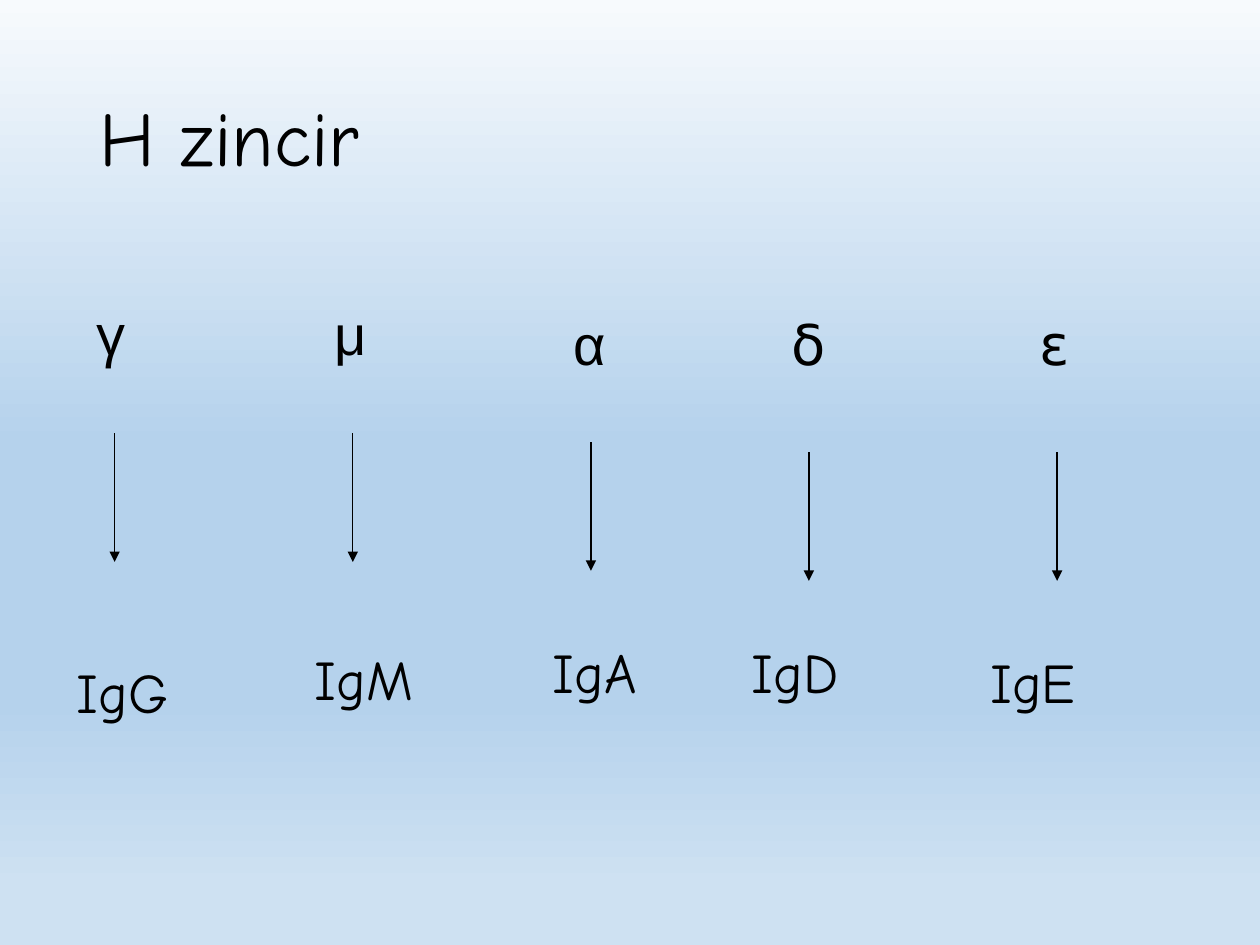
import pptx
import pptx.dml.color
import pptx.enum.shapes
import pptx.enum.text
import pptx.oxml
import pptx.oxml.ns
import pptx.util
from pptx.util import Inches

TITLE = "H zincir"
BACKDROP = [(0, "F7FAFD"), (47, "B5D2EC"), (74, "B5D2EC"), (94, "CEE1F2")]
INK = "000000"
HAND = "Comic Neue"

# chain: letter, font, left, top; arrow top; class: name, left, top, width
CHAINS = [
    ("γ", HAND, 0.67, 2.33, 3.44, "IgG", 0.51, 5.17, 1.18),
    ("μ", "Arial", 2.56, 2.33, 3.44, "IgM", 2.4, 5.07, 1.07),
    ("α", "Arial", 4.45, 2.41, 3.51, "IgA", 4.29, 5.01, 1.01),
    ("δ", "DejaVu Sans", 6.18, 2.41, 3.59, "IgD", 5.87, 5.01, 1),
    ("ε", "DejaVu Sans", 8.15, 2.41, 3.59, "IgE", 7.76, 5.09, 0.96),
]
LABEL_SIZE = 0.63
ARROW_INSET = 0.24
ARROW_LENGTH = 1.02


def color(value):
    return pptx.dml.color.RGBColor.from_string(value)


def add_xml(parent, tag, **attributes):
    child = pptx.oxml.parse_xml(f"<a:{tag} {pptx.oxml.ns.nsdecls('a')}/>")
    for key, value in attributes.items():
        child.set(key, str(value))
    parent.append(child)
    return child


def paint_backdrop(slide):
    fill = slide.background.fill
    fill.gradient()
    fill.gradient_angle = 270
    stops = slide.element.find(".//" + pptx.oxml.ns.qn("a:gsLst"))
    for stop in list(stops):
        stops.remove(stop)
    for percent, value in BACKDROP:
        add_xml(add_xml(stops, "gs", pos=percent * 1000), "srgbClr", val=value)


def add_label(slide, words, left, top, width, height=LABEL_SIZE, size=32, font=HAND, wrap=True):
    label = slide.shapes.add_textbox(Inches(left), Inches(top), Inches(width), Inches(height))
    frame = label.text_frame
    frame.text = words
    frame.word_wrap = wrap
    style = frame.paragraphs[0].runs[0].font
    style.name = font
    style.size = pptx.util.Pt(size)
    style.color.rgb = color(INK)
    return frame


def add_arrow(slide, x, top):
    arrow = slide.shapes.add_connector(
        pptx.enum.shapes.MSO_CONNECTOR.STRAIGHT,
        Inches(x), Inches(top), Inches(x), Inches(top + ARROW_LENGTH))
    arrow.line.color.rgb = color(INK)
    arrow.line.width = pptx.util.Pt(0.75)
    add_xml(arrow.line._get_or_add_ln(), "tailEnd", type="triangle")
    add_xml(arrow._element.spPr, "effectLst")


def main():
    deck = pptx.Presentation()
    deck.slide_width, deck.slide_height = Inches(10), Inches(7.5)
    slide = deck.slides.add_slide(deck.slide_layouts[6])
    paint_backdrop(slide)

    heading = add_label(slide, TITLE, 0.69, 0.4, 8.62, 1.45, size=44)
    heading.vertical_anchor = pptx.enum.text.MSO_ANCHOR.MIDDLE
    heading.paragraphs[0].line_spacing = 0.9

    for letter, font, left, top, arrow_top, name, name_left, name_top, name_width in CHAINS:
        add_label(slide, letter, left, top, LABEL_SIZE, font=font)
        add_arrow(slide, left + ARROW_INSET, arrow_top)
        add_label(slide, name, name_left, name_top, name_width, wrap=False)

    deck.save("out.pptx")


if __name__ == "__main__":
    main()
